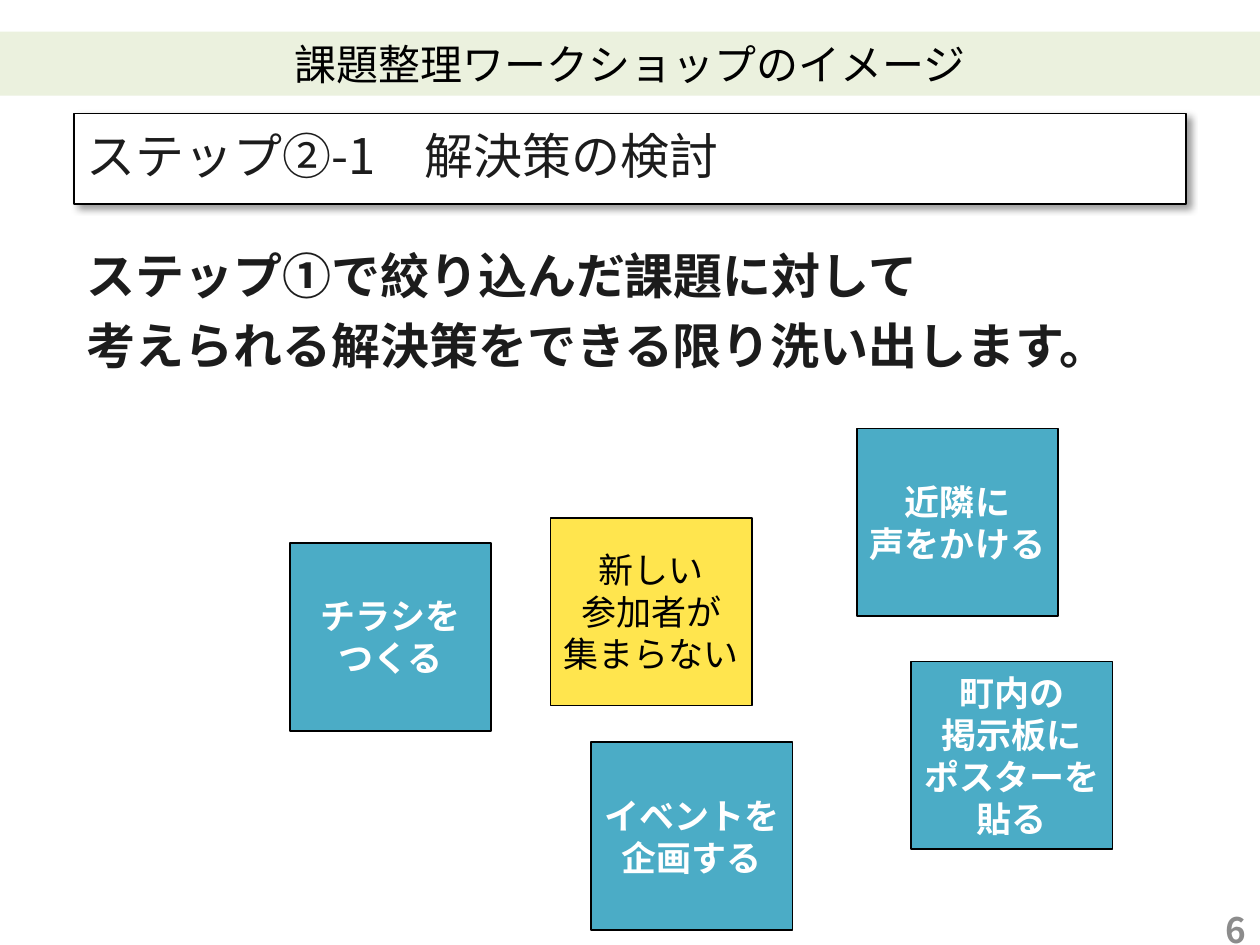
import pptx
import pptx.dml.color
import pptx.enum.shapes
import pptx.enum.text
import pptx.oxml
import pptx.oxml.ns
import pptx.util
from pptx.util import Inches

RGBColor = pptx.dml.color.RGBColor
ALIGN = pptx.enum.text.PP_ALIGN
ANCHOR = pptx.enum.text.MSO_ANCHOR

FONT = "Noto Sans CJK JP"
BLACK = RGBColor(0x00, 0x00, 0x00)
WHITE = RGBColor(0xFF, 0xFF, 0xFF)
INK = RGBColor(0x1C, 0x1C, 0x1C)
GRAY = RGBColor(0x8C, 0x8C, 0x8C)
PALE_GREEN = RGBColor(0xEB, 0xF1, 0xDE)
YELLOW = RGBColor(0xFF, 0xE5, 0x4E)
TEAL = RGBColor(0x4B, 0xAC, 0xC6)

NOTE_WIDTH, NOTE_HEIGHT = 1.6, 1.49

# Sticky notes: left, top, text
SOLUTIONS = [
    (6.8, 3.4, "近隣に\n声をかける"),
    (4.69, 5.89, "イベントを\n企画する"),
    (7.23, 5.25, "町内の\n掲示板に\nポスターを\n貼る"),
    (2.3, 4.31, "チラシを\nつくる"),
]


def write(sp, text, size, color, bold=False, align=ALIGN.LEFT,
          anchor=ANCHOR.MIDDLE, wrap=True):
    tf = sp.text_frame
    tf.text = text
    tf.word_wrap = wrap
    tf.auto_size = pptx.enum.text.MSO_AUTO_SIZE.NONE
    tf.vertical_anchor = anchor
    for p in tf.paragraphs:
        p.alignment = align
        for r in p.runs:
            r.font.size = pptx.util.Pt(size)
            r.font.bold = bold
            r.font.name = FONT
            r.font.color.rgb = color
            # Japanese glyphs take the East Asian typeface
            ea = pptx.oxml.parse_xml(
                f'<a:ea {pptx.oxml.ns.nsdecls("a")} typeface="{FONT}"/>')
            r.font._element.find(pptx.oxml.ns.qn("a:latin")).addnext(ea)


def space(sp, before, after):
    for p in sp.text_frame.paragraphs:
        p.line_spacing = 0.9
        p.space_before = pptx.util.Pt(before)
        p.space_after = pptx.util.Pt(after)


def add_box(s, left, top, width, height, fill):
    sp = s.shapes.add_shape(
        pptx.enum.shapes.MSO_SHAPE.RECTANGLE,
        Inches(left), Inches(top), Inches(width), Inches(height))
    sp.shadow.inherit = False
    sp.fill.solid()
    sp.fill.fore_color.rgb = fill
    sp.line.color.rgb = BLACK
    sp.line.width = pptx.util.Pt(1)
    return sp


def add_note(s, left, top, text, fill, color, bold):
    sp = add_box(s, left, top, NOTE_WIDTH, NOTE_HEIGHT, fill)
    write(sp, text, 20, color, bold, ALIGN.CENTER, wrap=False)


def add_text(s, left, top, width, height, text, size, color, **style):
    sp = s.shapes.add_textbox(
        Inches(left), Inches(top), Inches(width), Inches(height))
    write(sp, text, size, color, **style)
    return sp


def add_drop_shadow(sp):
    effects = sp._element.spPr.find(pptx.oxml.ns.qn("a:effectLst"))
    blur, dist = pptx.util.Pt(4), pptx.util.Pt(3)
    effects.append(pptx.oxml.parse_xml(
        f'<a:outerShdw {pptx.oxml.ns.nsdecls("a")} blurRad="{blur}" '
        f'dist="{dist}" dir="{45 * 60000}" algn="tl" rotWithShape="0">'
        '<a:srgbClr val="000000"><a:alpha val="40000"/></a:srgbClr>'
        '</a:outerShdw>'))


def set_title(s, text):
    sp = s.shapes.title
    sp.left, sp.top = Inches(0), Inches(0.25)
    sp.width, sp.height = Inches(10), Inches(0.51)
    sp.fill.solid()
    sp.fill.fore_color.rgb = PALE_GREEN
    write(sp, text, 24, BLACK, align=ALIGN.CENTER)


def main():
    prs = pptx.Presentation()
    prs.slide_width, prs.slide_height = Inches(10), Inches(7.5)
    s = prs.slides.add_slide(prs.slide_layouts[5])

    # Title band
    set_title(s, "課題整理ワークショップのイメージ")

    # Step heading
    heading = add_box(s, 0.59, 0.9, 8.82, 0.72, WHITE)
    add_drop_shadow(heading)
    write(heading, "ステップ②-1　解決策の検討", 28, INK)
    space(heading, 0, 4.2)

    # Explanation
    body = add_text(
        s, 0.59, 1.95, 9.29, 1.49,
        "ステップ①で絞り込んだ課題に対して\n"
        "考えられる解決策をできる限り洗い出します。",
        28, INK, bold=True, anchor=ANCHOR.TOP)
    space(body, 5.6, 4.2)

    # The issue and its possible solutions
    add_note(s, 4.37, 4.11, "新しい\n参加者が\n集まらない", YELLOW, BLACK, False)
    for left, top, text in SOLUTIONS:
        add_note(s, left, top, text, TEAL, WHITE, True)

    # Page number
    add_text(s, 7.66, 7.26, 2.33, 0.24, "6", 20, GRAY,
             bold=True, align=ALIGN.RIGHT)

    prs.save("out.pptx")


if __name__ == "__main__":
    main()
